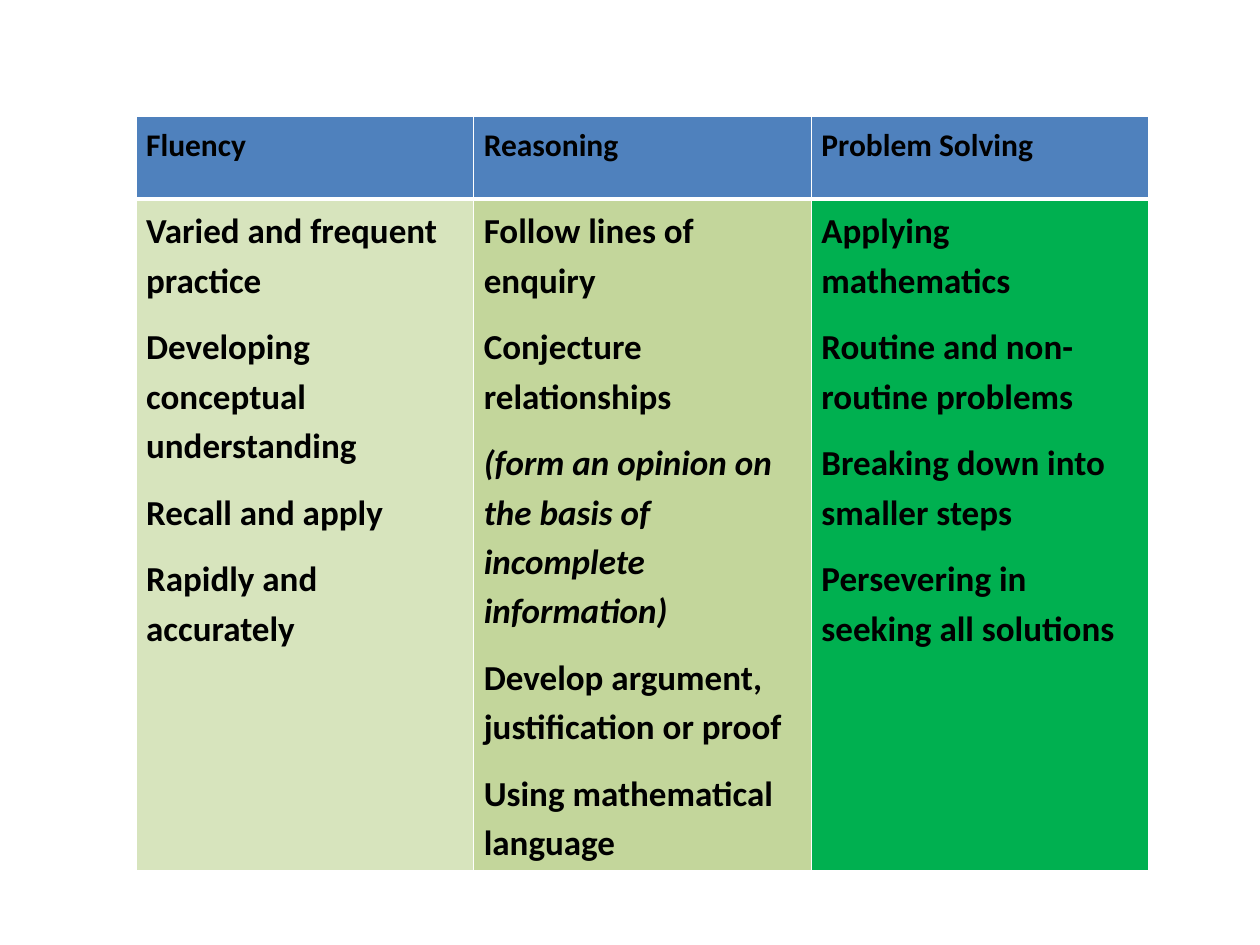
from dataclasses import dataclass

from lxml import etree
from pptx import Presentation
from pptx.dml.color import RGBColor
from pptx.oxml.ns import qn
from pptx.util import Inches, Pt

BLACK = RGBColor(0x00, 0x00, 0x00)
WHITE = RGBColor(0xFF, 0xFF, 0xFF)
HEADER_BLUE = RGBColor(0x4F, 0x81, 0xBD)
PALE_GREEN = RGBColor(0xD7, 0xE4, 0xBD)
OLIVE_GREEN = RGBColor(0xC3, 0xD6, 0x9B)
BRIGHT_GREEN = RGBColor(0x00, 0xB0, 0x50)

BLANK_LAYOUT = 6
COLUMN_WIDTH = Inches(2.68)
ROW_HEIGHTS = (Inches(0.66), Inches(4.86))
THIN, THICK = Pt(1), Pt(3)


@dataclass
class Point:
    text: str
    italic: bool = False


@dataclass
class Aim:
    heading: str
    color: RGBColor
    points: list[Point]


AIMS = [
    Aim("Fluency", PALE_GREEN, [
        Point("Varied and frequent practice"),
        Point("Developing conceptual understanding"),
        Point("Recall and apply"),
        Point("Rapidly and accurately"),
    ]),
    Aim("Reasoning", OLIVE_GREEN, [
        Point("Follow lines of enquiry"),
        Point("Conjecture relationships"),
        Point("(form an opinion on the basis of incomplete information)", italic=True),
        Point("Develop argument, justification or proof"),
        Point("Using mathematical language"),
    ]),
    Aim("Problem Solving", BRIGHT_GREEN, [
        Point("Applying mathematics"),
        Point("Routine and non-routine problems"),
        Point("Breaking down into smaller steps"),
        Point("Persevering in seeking all solutions"),
    ]),
]


def set_borders(cell, top: int, bottom: int) -> None:
    """Draw white cell borders, with thin sides; call before filling the cell."""
    properties = cell._tc.get_or_add_tcPr()
    widths = {"a:lnL": THIN, "a:lnR": THIN, "a:lnT": top, "a:lnB": bottom}
    for tag, width in widths.items():
        line = etree.SubElement(properties, qn(tag), w=str(int(width)))
        fill = etree.SubElement(line, qn("a:solidFill"))
        etree.SubElement(fill, qn("a:srgbClr"), val=str(WHITE))


def fill_cell(cell, points: list[Point], size: int, color: RGBColor) -> None:
    cell.fill.solid()
    cell.fill.fore_color.rgb = color
    cell.margin_left = cell.margin_right = Inches(0.08)
    cell.margin_top = cell.margin_bottom = Inches(0.04)
    frame = cell.text_frame
    for index, point in enumerate(points):
        paragraph = frame.add_paragraph() if index else frame.paragraphs[0]
        paragraph.text = point.text
        paragraph.line_spacing = 1.15
        paragraph.space_after = Pt(10)
        font = paragraph.font
        font.name = "Calibri"
        font.size = Pt(size)
        font.bold = True
        font.italic = point.italic
        font.color.rgb = BLACK


def main() -> None:
    presentation = Presentation()
    presentation.slide_width = Inches(10)
    presentation.slide_height = Inches(7.5)
    slide = presentation.slides.add_slide(presentation.slide_layouts[BLANK_LAYOUT])

    table = slide.shapes.add_table(
        len(ROW_HEIGHTS), len(AIMS), Inches(1.08), Inches(0.92),
        COLUMN_WIDTH * len(AIMS), sum(ROW_HEIGHTS),
    ).table
    for row, height in zip(table.rows, ROW_HEIGHTS):
        row.height = height

    for column, aim in enumerate(AIMS):
        table.columns[column].width = COLUMN_WIDTH
        header, body = table.cell(0, column), table.cell(1, column)
        set_borders(header, top=THIN, bottom=THICK)
        fill_cell(header, [Point(aim.heading)], 18, HEADER_BLUE)
        set_borders(body, top=THICK, bottom=THIN)
        fill_cell(body, aim.points, 20, aim.color)

    presentation.save("out.pptx")


if __name__ == "__main__":
    main()
